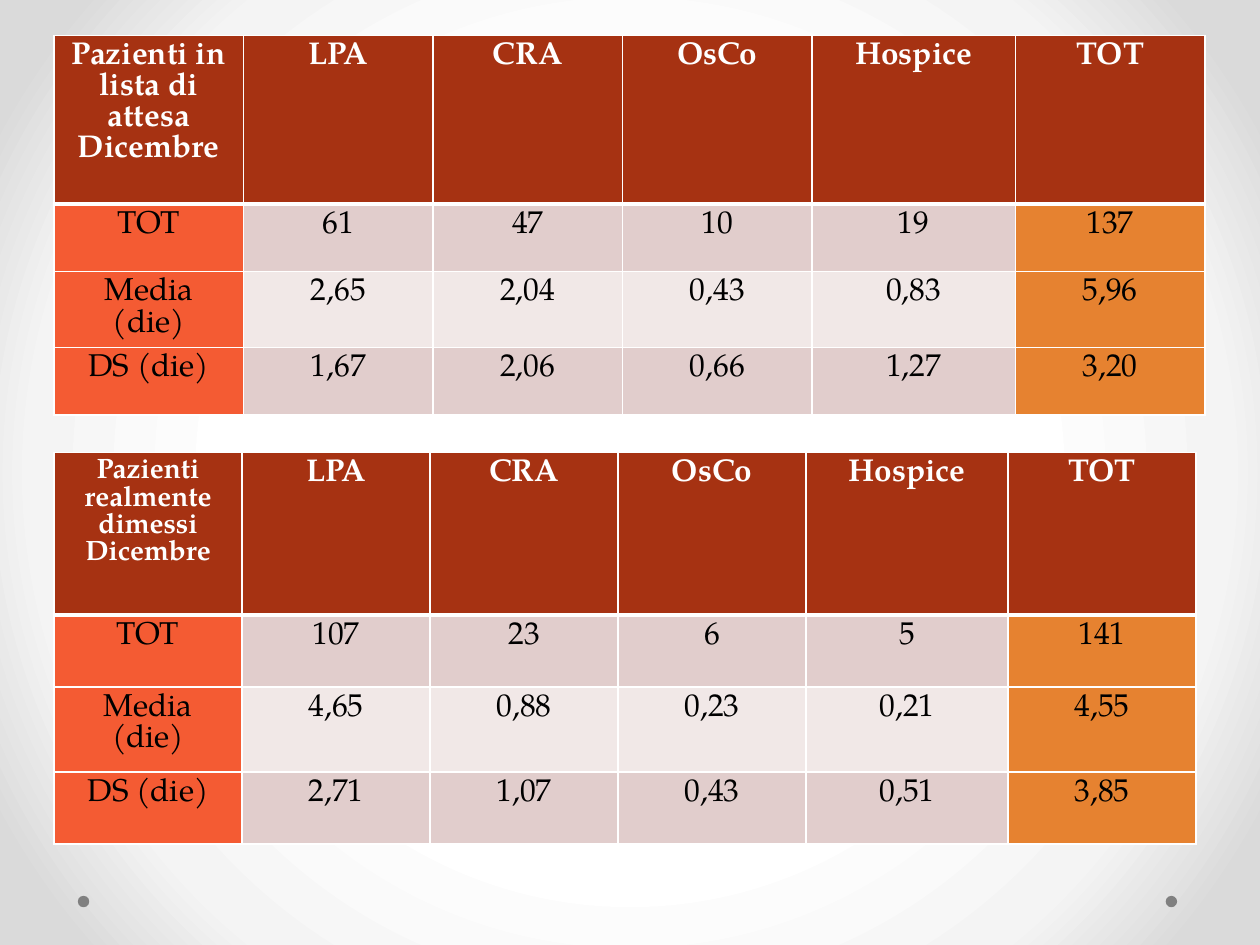
from pptx import Presentation
from pptx.dml.color import RGBColor
from pptx.enum.shapes import MSO_SHAPE
from pptx.enum.text import PP_ALIGN
from pptx.oxml import parse_xml
from pptx.oxml.ns import nsdecls
from pptx.util import Cm, Pt

OVAL, CENTER = MSO_SHAPE.OVAL, PP_ALIGN.CENTER

THEME = {
    "font": "TeX Gyre Pagella",
    "size": 18,
    "header": "A63212",
    "label": "F45B33",
    "bands": ("E1CDCC", "F1E8E7"),
    "total": "E68230",
    "light": "FFFFFF",
    "dark": "000000",
    "dot": "808080",
    "backdrop": ((50, "FFFFFF"), (76, "F4F4F4"), (92, "DADADA")),
    "line": 1,
    "header_line": 3,
}

COLUMNS = ("LPA", "CRA", "OsCo", "Hospice", "TOT")
LEFT = 1.09
TABLES = [
    {
        "title": "Pazienti in lista di attesa\nDicembre",
        "title_size": 18,
        "top": 0.72,
        "width": 3.82,
        "hospice_width": 4.1,
        "heights": (3.39, 1.36, 1.54, 1.36),
        "rows": [
            ("TOT", "61", "47", "10", "19", "137"),
            ("Media (die)", "2,65", "2,04", "0,43", "0,83", "5,96"),
            ("DS (die)", "1,67", "2,06", "0,66", "1,27", "3,20"),
        ],
    },
    {
        "title": "Pazienti realmente dimessi\nDicembre",
        "title_size": 16,
        "top": 9.12,
        "width": 3.79,
        "hospice_width": 4.07,
        "heights": (3.28, 1.45, 1.71, 1.45),
        "rows": [
            ("TOT", "107", "23", "6", "5", "141"),
            ("Media (die)", "4,65", "0,88", "0,23", "0,21", "4,55"),
            ("DS (die)", "2,71", "1,07", "0,43", "0,51", "3,85"),
        ],
    },
]
DOT_LEFTS, DOT_TOP, DOT_SIZE = (23.5, 1.57), 18.06, 0.23


def add_backdrop(s):
    stops = "".join(
        f'<a:gs pos="{pos * 1000}"><a:srgbClr val="{color}"/></a:gs>'
        for pos, color in THEME["backdrop"]
    )
    s.background.fill.solid()
    props = s.background._cSld.bg.bgPr
    props.replace(props[0], parse_xml(
        f'<a:gradFill {nsdecls("a")} rotWithShape="1"><a:gsLst>{stops}</a:gsLst>'
        '<a:path path="circle"><a:fillToRect l="50000" t="50000" r="50000" b="50000"/>'
        "</a:path></a:gradFill>"
    ))


def add_dot(s, left):
    sp = s.shapes.add_shape(OVAL, Cm(left), Cm(DOT_TOP), Cm(DOT_SIZE), Cm(DOT_SIZE))
    sp.shadow.inherit = False
    sp.fill.solid()
    sp.fill.fore_color.rgb = RGBColor.from_string(THEME["dot"])
    sp.line.fill.background()


def set_borders(cell, row):
    widths = dict.fromkeys("LRTB", THEME["line"])
    if row < 2:
        widths["TB"[1 - row]] = THEME["header_line"]
    props = cell._tc.get_or_add_tcPr()
    for side, width in widths.items():
        props.append(parse_xml(
            f'<a:ln{side} {nsdecls("a")} w="{Pt(width)}"><a:solidFill>'
            f'<a:srgbClr val="{THEME["light"]}"/></a:solidFill></a:ln{side}>'
        ))


def cell_fill(row, col):
    if row == 0:
        return THEME["header"]
    if col == 0:
        return THEME["label"]
    if col == len(COLUMNS):
        return THEME["total"]
    return THEME["bands"][(row - 1) % 2]


def fill_cell(cell, text, row, col, size):
    set_borders(cell, row)
    cell.fill.solid()
    cell.fill.fore_color.rgb = RGBColor.from_string(cell_fill(row, col))
    cell.text = text
    style = {"name": THEME["font"], "size": Pt(size), "bold": row == 0}
    color = THEME["dark"] if row else THEME["light"]
    for p in cell.text_frame.paragraphs:
        p.alignment = CENTER
        for r in p.runs:
            for name, value in style.items():
                setattr(r.font, name, value)
            r.font.color.rgb = RGBColor.from_string(color)


def add_patient_table(s, data):
    rows = [(data["title"], *COLUMNS), *data["rows"]]
    widths = [data["hospice_width"] if name == "Hospice" else data["width"] for name in rows[0]]
    table = s.shapes.add_table(
        len(rows), len(widths), Cm(LEFT), Cm(data["top"]),
        Cm(sum(widths)), Cm(sum(data["heights"])),
    ).table
    for column, width in zip(table.columns, widths):
        column.width = Cm(width)
    for i, (values, height) in enumerate(zip(rows, data["heights"])):
        table.rows[i].height = Cm(height)
        for j, text in enumerate(values):
            size = data["title_size"] if i == j == 0 else THEME["size"]
            fill_cell(table.cell(i, j), text, i, j, size)


def main():
    prs = Presentation()
    prs.slide_width, prs.slide_height = Cm(25.4), Cm(19.05)
    s = prs.slides.add_slide(prs.slide_layouts[6])
    add_backdrop(s)
    for left in DOT_LEFTS:
        add_dot(s, left)
    for data in TABLES:
        add_patient_table(s, data)
    prs.save("out.pptx")


if __name__ == "__main__":
    main()
